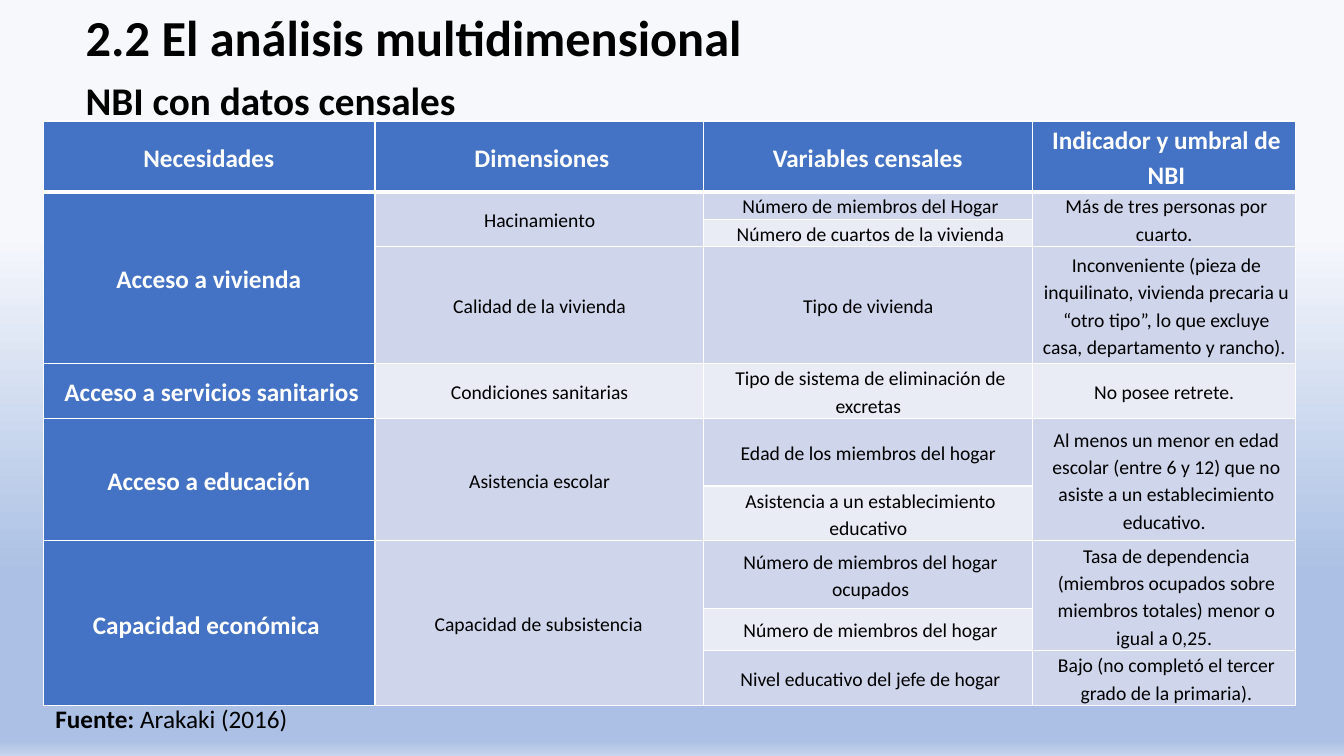
from dataclasses import dataclass

from lxml import etree
from pptx import Presentation
from pptx import util as u
from pptx.dml.color import RGBColor
from pptx.enum import text
from pptx.oxml import ns

FONT = "Calibri"
BLACK = RGBColor(0x00, 0x00, 0x00)
WHITE = RGBColor(0xFF, 0xFF, 0xFF)
HEADING_BLUE = RGBColor(0x44, 0x72, 0xC4)
BAND_DARK = RGBColor(0xCF, 0xD5, 0xEA)
BAND_LIGHT = RGBColor(0xE9, 0xEB, 0xF5)
SKY_PALE = RGBColor(0xF6, 0xF8, 0xFC)
SKY_BLUE = RGBColor(0xAB, 0xC0, 0xE4)
SKY_FOOT = RGBColor(0xC7, 0xD5, 0xED)
BACKGROUND_STOPS = [(31, SKY_PALE), (76, SKY_BLUE), (98, SKY_BLUE), (100, SKY_FOOT)]

COLUMN_WIDTHS = [329, 326, 326, 261]
ROW_HEIGHTS = [67, 24, 25, 116, 49, 67, 49, 67, 32, 49]


@dataclass
class Entry:
    row: int
    column: int
    words: str
    rows: int = 1
    indent: int = 5


ENTRIES = [
    Entry(0, 0, "Necesidades "),
    Entry(0, 1, "Dimensiones"),
    Entry(0, 2, "Variables censales "),
    Entry(0, 3, "Indicador y umbral de NBI"),
    Entry(1, 0, "Acceso a vivienda ", rows=3),
    Entry(1, 1, "Hacinamiento ", rows=2),
    Entry(1, 2, "Número de miembros del Hogar"),
    Entry(1, 3, "Más de tres personas por cuarto. ", rows=2),
    Entry(2, 2, "Número de cuartos de la vivienda"),
    Entry(3, 1, "Calidad de la vivienda "),
    Entry(3, 2, "Tipo de vivienda "),
    Entry(3, 3, "Inconveniente (pieza de inquilinato, vivienda precaria u “otro tipo”, "
                "lo que excluye casa, departamento y rancho). "),
    Entry(4, 0, "Acceso a servicios sanitarios"),
    Entry(4, 1, "Condiciones sanitarias "),
    Entry(4, 2, "Tipo de sistema de eliminación de excretas "),
    Entry(4, 3, "No posee retrete. "),
    Entry(5, 0, "Acceso a educación ", rows=2),
    Entry(5, 1, "Asistencia escolar ", rows=2),
    Entry(5, 2, "Edad de los miembros del hogar "),
    Entry(5, 3, "Al menos un menor en edad escolar (entre 6 y 12) que no asiste "
                "a un establecimiento educativo. ", rows=2),
    Entry(6, 2, "Asistencia a un establecimiento educativo "),
    Entry(7, 0, "Capacidad económica ", rows=3, indent=0),
    Entry(7, 1, "Capacidad de subsistencia ", rows=3, indent=3),
    Entry(7, 2, "Número de miembros del hogar ocupados"),
    Entry(7, 3, "Tasa de dependencia (miembros ocupados sobre miembros totales) "
                "menor o igual a 0,25. ", rows=2),
    Entry(8, 2, "Número de miembros del hogar"),
    Entry(9, 2, "Nivel educativo del jefe de hogar"),
    Entry(9, 3, "Bajo (no completó el tercer grado de la primaria)."),
]


def px(length: int) -> u.Emu:
    """100 px to the inch."""
    return u.Emu(length * 9144)


def add_element(parent, tag: str, **attributes: str):
    return etree.SubElement(parent, ns.qn(tag), attributes)


def style_span(span, size: int, color: RGBColor, bold: bool) -> None:
    span.font.name = FONT
    span.font.size = u.Pt(size)
    span.font.color.rgb = color
    span.font.bold = bold


def set_indent(para, indent: int) -> None:
    properties = para._p.get_or_add_pPr()
    properties.set("marL", str(px(indent)))
    properties.set("indent", "0")


def paint_background(page) -> None:
    fill = page.background.fill
    fill.gradient()
    gradient = page._element.xpath(".//p:bgPr/a:gradFill")[0]
    stops = gradient.find(ns.qn("a:gsLst"))
    for stop in list(stops):
        stops.remove(stop)
    for percent, color in BACKGROUND_STOPS:
        stop = add_element(stops, "a:gs", pos=str(percent * 1000))
        add_element(stop, "a:srgbClr", val=str(color))
    gradient.find(ns.qn("a:lin")).set("ang", "5400000")


def add_headings(page) -> None:
    title = page.shapes.title._element
    title.getparent().remove(title)
    body = page.placeholders[1]
    body.left, body.top, body.width, body.height = px(75), px(8), px(1150), px(692)
    frame = body.text_frame
    frame.auto_size = text.MSO_AUTO_SIZE.NONE
    frame.text = "2.2 El análisis multidimensional\nNBI con datos censales"
    for para, size in zip(frame.paragraphs, (36, 28)):
        para.line_spacing = 0.9
        para.space_before = u.Pt(10)
        set_indent(para, 0)
        add_element(para._p.get_or_add_pPr(), "a:buNone")
        style_span(para.runs[0], size, BLACK, True)


def set_borders(cell, row: int) -> None:
    widths = {"L": 1, "R": 1, "T": 3 if row == 1 else 1, "B": 3 if row == 0 else 1}
    properties = cell._tc.get_or_add_tcPr()
    for side, width in widths.items():
        line = add_element(properties, f"a:ln{side}", w=str(u.Pt(width)))
        add_element(add_element(line, "a:solidFill"), "a:srgbClr", val=str(WHITE))


def fill_entry(table, entry: Entry) -> None:
    cell = table.cell(entry.row, entry.column)
    if entry.rows > 1:
        cell.merge(table.cell(entry.row + entry.rows - 1, entry.column))
    cell.margin_left = cell.margin_right = px(5)
    cell.margin_top = cell.margin_bottom = 0
    cell.vertical_anchor = text.MSO_ANCHOR.MIDDLE
    cell.text_frame.text = entry.words
    para = cell.text_frame.paragraphs[0]
    para.alignment = text.PP_ALIGN.CENTER
    para.line_spacing = 1.15
    set_indent(para, entry.indent)
    if entry.row == 0 or entry.column == 0:
        style_span(para.runs[0], 18, WHITE, True)
    else:
        style_span(para.runs[0], 14, BLACK, False)


def add_needs_table(page) -> None:
    graphic = page.shapes.add_table(len(ROW_HEIGHTS), len(COLUMN_WIDTHS),
                                    px(43), px(120), px(1242), px(565))
    table = graphic.table
    for column, width in zip(table.columns, COLUMN_WIDTHS):
        column.width = px(width)
    for row, height in zip(table.rows, ROW_HEIGHTS):
        row.height = px(height)

    # Borders, headings and banding
    for row in range(len(ROW_HEIGHTS)):
        for column in range(len(COLUMN_WIDTHS)):
            cell = table.cell(row, column)
            cell.margin_top = cell.margin_bottom = 0
            set_borders(cell, row)
            cell.fill.solid()
            if row == 0 or column == 0:
                cell.fill.fore_color.rgb = HEADING_BLUE
            else:
                cell.fill.fore_color.rgb = BAND_DARK if row % 2 else BAND_LIGHT

    for entry in ENTRIES:
        fill_entry(table, entry)
    graphic.height = px(565)


def add_reference(page) -> None:
    box = page.shapes.add_textbox(px(15), px(688), px(282), px(43))
    box.text_frame.word_wrap = False
    box.text_frame.auto_size = text.MSO_AUTO_SIZE.SHAPE_TO_FIT_TEXT
    para = box.text_frame.paragraphs[0]
    para.alignment = text.PP_ALIGN.JUSTIFY
    para.line_spacing = 1.15
    para.space_after = u.Pt(10)
    set_indent(para, 30)
    for words, bold in (("Fuente: ", True), ("Arakaki (2016)", False)):
        span = para.add_run()
        span.text = words
        style_span(span, 18, BLACK, bold)


def main() -> None:
    deck = Presentation()
    deck.slide_width, deck.slide_height = px(1333), px(750)
    page = deck.slides.add_slide(deck.slide_layouts[1])
    paint_background(page)
    add_headings(page)
    add_needs_table(page)
    add_reference(page)
    deck.save("out.pptx")


if __name__ == "__main__":
    main()
